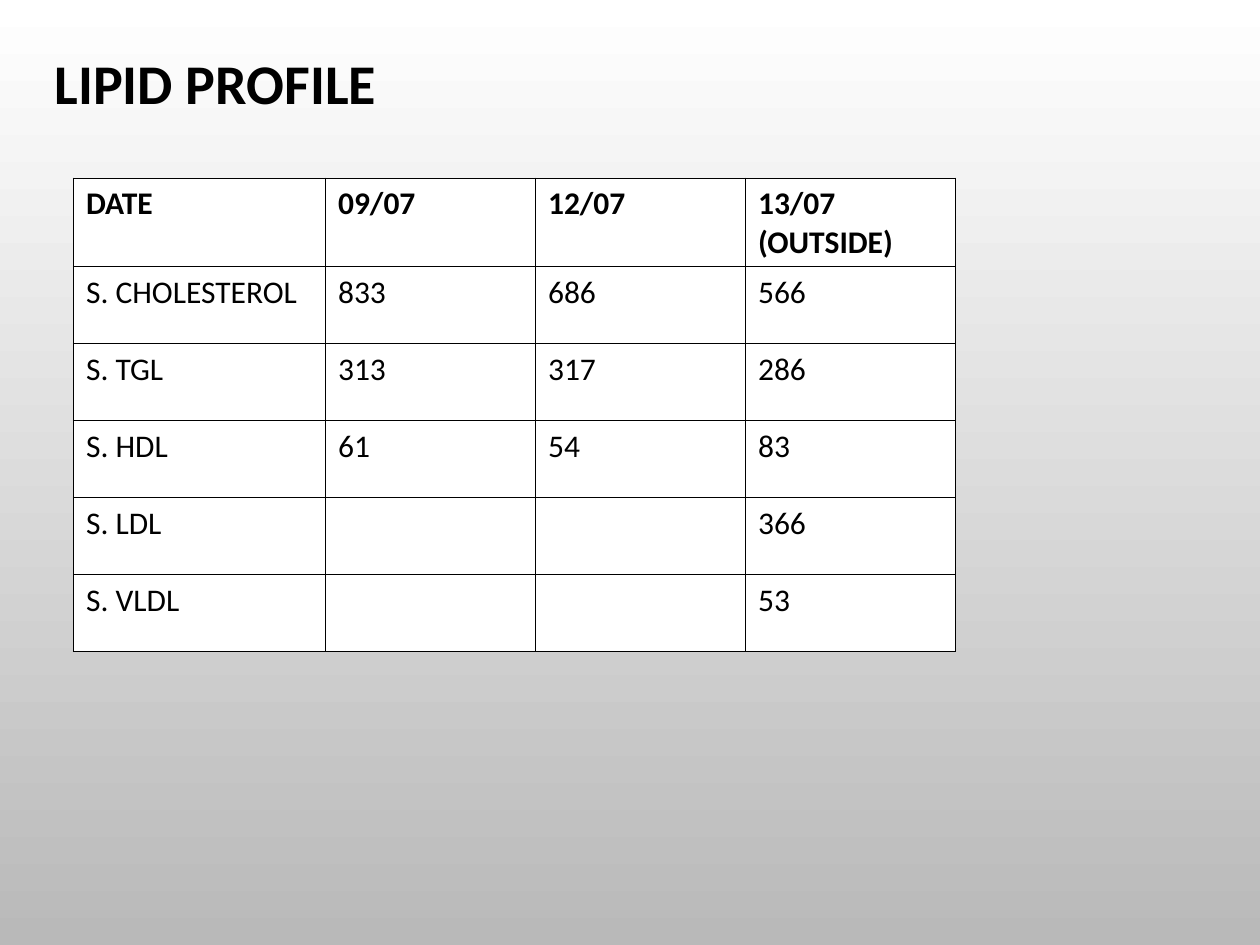
"""Build the lipid profile slide."""
from lxml import etree
from pptx import Presentation
from pptx.dml.color import RGBColor
from pptx.enum.text import MSO_ANCHOR, MSO_AUTO_SIZE, PP_ALIGN
from pptx.oxml.ns import qn
from pptx.util import Pt

LEFT = PP_ALIGN.LEFT
TOP = MSO_ANCHOR.TOP
FIT_SHAPE = MSO_AUTO_SIZE.SHAPE_TO_FIT_TEXT
TITLE_ONLY = 5
FONT = "Calibri"
BLACK, WHITE, GREY = "000000", "FFFFFF", "B9B9B9"
COLUMN_WIDTHS = (144, 120, 120, 120)
ROW_HEIGHT = 44
ROWS = (
    ("DATE", "09/07", "12/07", "13/07\n(OUTSIDE)"),
    ("S. CHOLESTEROL", "833", "686", "566"),
    ("S. TGL", "313", "317", "286"),
    ("S. HDL", "61", "54", "83"),
    ("S. LDL", "", "", "366"),
    ("S. VLDL", "", "", "53"),
)


def color(value):
    """Return the colour for a hex string."""
    return RGBColor.from_string(value)


def set_text(text_frame, text, size, bold):
    """Write left-aligned black text and format its runs."""
    text_frame.text = text
    for paragraph in text_frame.paragraphs:
        paragraph.alignment = LEFT
        for run in paragraph.runs:
            run.font.name = FONT
            run.font.size = Pt(size)
            run.font.bold = bold
            run.font.color.rgb = color(BLACK)


def set_background(slide):
    """Fill the background from white at the top to grey at the bottom."""
    fill = slide.background.fill
    fill.gradient()
    fill.gradient_angle = 270
    for stop, value in zip(fill.gradient_stops, (WHITE, GREY)):
        stop.color.rgb = color(value)


def add_title(slide, text):
    """Place the title at the top left."""
    title = slide.shapes.title
    title.left, title.top = Pt(24), Pt(24)
    title.width, title.height = Pt(204), Pt(46)
    text_frame = title.text_frame
    text_frame.word_wrap = False
    text_frame.auto_size = FIT_SHAPE
    text_frame.vertical_anchor = TOP
    set_text(text_frame, text, 32, True)


def set_borders(cell):
    """Draw a thin black line on each side of a cell."""
    properties = cell._tc.get_or_add_tcPr()
    for side in ("a:lnL", "a:lnR", "a:lnT", "a:lnB"):
        line = etree.SubElement(properties, qn(side), w=str(Pt(1)))
        fill = etree.SubElement(line, qn("a:solidFill"))
        etree.SubElement(fill, qn("a:srgbClr"), val=BLACK)


def add_results_table(slide):
    """Add the table of lipid values by date."""
    frame = slide.shapes.add_table(
        len(ROWS), len(COLUMN_WIDTHS), Pt(42), Pt(102),
        Pt(sum(COLUMN_WIDTHS)), Pt(ROW_HEIGHT * len(ROWS)))
    table = frame.table
    for column, width in zip(table.columns, COLUMN_WIDTHS):
        column.width = Pt(width)
    for row_index, values in enumerate(ROWS):
        for column_index, value in enumerate(values):
            cell = table.cell(row_index, column_index)
            set_borders(cell)
            cell.fill.solid()
            cell.fill.fore_color.rgb = color(WHITE)
            set_text(cell.text_frame, value, 18, row_index == 0)


def main():
    """Create the presentation and save it."""
    presentation = Presentation()
    presentation.slide_width, presentation.slide_height = Pt(720), Pt(540)
    slide = presentation.slides.add_slide(presentation.slide_layouts[TITLE_ONLY])
    set_background(slide)
    add_title(slide, "LIPID PROFILE")
    add_results_table(slide)
    presentation.save("out.pptx")


if __name__ == "__main__":
    main()
